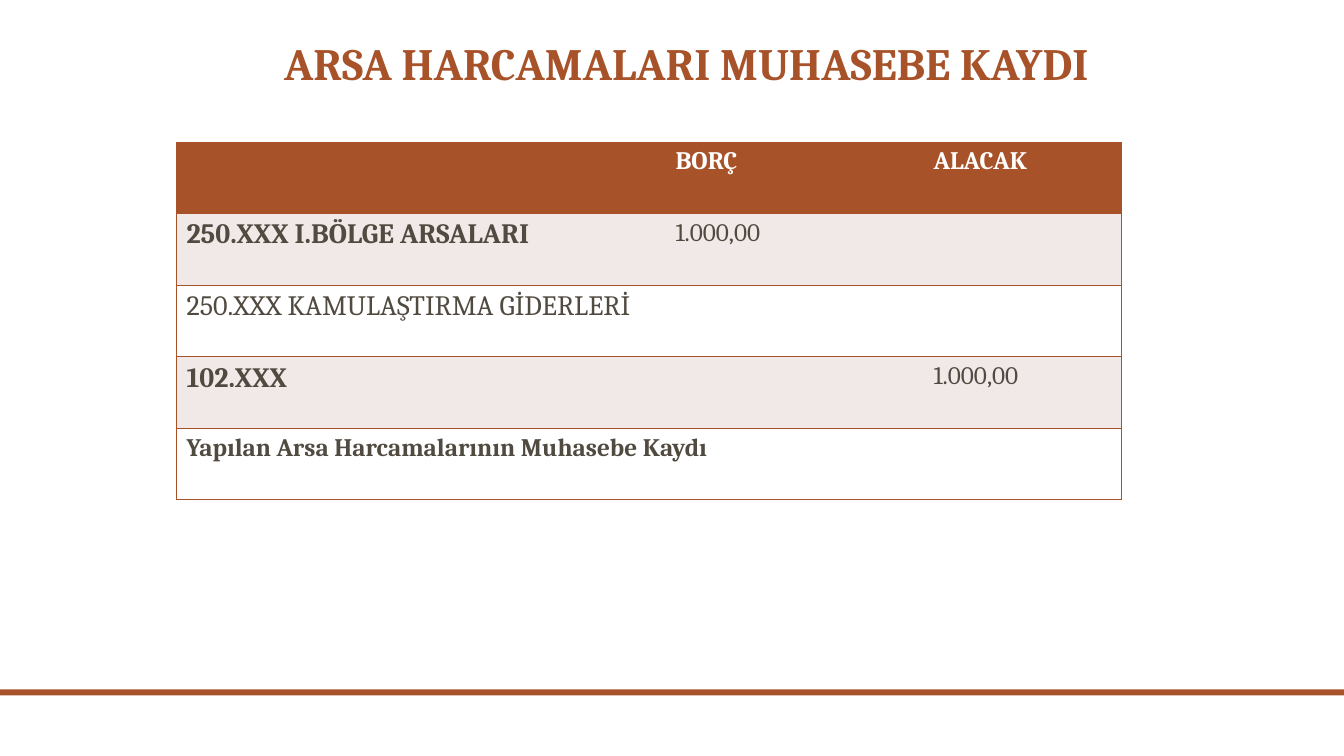
from lxml import etree
from pptx import Presentation
from pptx.dml.color import RGBColor
from pptx.enum import shapes, text
from pptx.oxml import ns
from pptx.util import Inches, Pt

FONT = "Cambria"
RUST, WHITE, ROSE, BROWN = "A85229", "FFFFFF", "F1E9E8", "514A40"
COLUMN_WIDTHS = (4.85, 2.56, 1.96)
ROW_HEIGHT = 0.71
ENTRIES = (
    (("", "BORÇ", "ALACAK"), 18, True),
    (("250.XXX I.BÖLGE ARSALARI", "1.000,00", ""), 20, True),
    (("250.XXX KAMULAŞTIRMA GİDERLERİ", "", ""), 20, False),
    (("102.XXX", "", "1.000,00"), 20, True),
    (("Yapılan Arsa Harcamalarının Muhasebe Kaydı", "", ""), 18, True),
)


def color(value):
    """Turn a hex string into a colour."""
    return RGBColor.from_string(value)


def style_text(paragraph, size, shade, bold):
    """Format every run of a paragraph."""
    for run in paragraph.runs:
        run.font.name = FONT
        run.font.size = Pt(size)
        run.font.bold = bold
        run.font.color.rgb = color(shade)


def add_footer_rule(slide):
    """Draw the bar across the foot of the slide."""
    rule = slide.shapes.add_shape(shapes.MSO_SHAPE.RECTANGLE, 0, Inches(6.84),
                                  Inches(13.33), Inches(0.06))
    rule.shadow.inherit = False
    rule.fill.solid()
    rule.fill.fore_color.rgb = color(RUST)
    rule.line.fill.background()


def add_title(slide, wording):
    """Place the centred heading."""
    box = slide.shapes.add_textbox(Inches(1.56), Inches(0.22), Inches(10.5), Inches(0.72))
    frame = box.text_frame
    frame.word_wrap = True
    frame.vertical_anchor = text.MSO_ANCHOR.BOTTOM
    frame.text = wording
    heading = frame.paragraphs[0]
    heading.alignment = text.PP_ALIGN.CENTER
    heading.line_spacing = 0.9
    style_text(heading, 32, RUST, True)


def set_borders(cell, visible):
    """Draw the visible sides of a cell and clear the others."""
    properties = cell._tc.get_or_add_tcPr()
    for position, side in enumerate("LRTB"):
        border = etree.Element(ns.qn(f"a:ln{side}"), w=str(Pt(1)))
        if side in visible:
            fill = etree.SubElement(border, ns.qn("a:solidFill"))
            etree.SubElement(fill, ns.qn("a:srgbClr"), val=RUST)
        else:
            etree.SubElement(border, ns.qn("a:noFill"))
        properties.insert(position, border)


def fill_cell(cell, wording, size, shade, bold, background):
    """Write a cell and paint its background."""
    cell.text = wording
    style_text(cell.text_frame.paragraphs[0], size, shade, bold)
    cell.fill.solid()
    cell.fill.fore_color.rgb = color(background)


def add_ledger(slide):
    """Build the table of debit and credit entries."""
    last_row, last_column = len(ENTRIES) - 1, len(COLUMN_WIDTHS) - 1
    frame = slide.shapes.add_table(
        len(ENTRIES), len(COLUMN_WIDTHS), Inches(1.75), Inches(1.41),
        Inches(sum(COLUMN_WIDTHS)), Inches(ROW_HEIGHT * len(ENTRIES)))
    ledger = frame.table
    for column, width in zip(ledger.columns, COLUMN_WIDTHS):
        column.width = Inches(width)
    for r, (wordings, account_size, account_bold) in enumerate(ENTRIES):
        ledger.rows[r].height = Inches(ROW_HEIGHT)
        header = r == 0
        background = RUST if header else ROSE if r % 2 else WHITE
        for c, wording in enumerate(wordings):
            cell = ledger.cell(r, c)
            fill_cell(cell, wording, 18 if c else account_size,
                      WHITE if header else BROWN,
                      header if c else account_bold, background)
            sides = "TB" + "L" * (c == 0) + "R" * (c == last_column or r == last_row)
            set_borders(cell, sides)
    ledger.cell(last_row, 0).merge(ledger.cell(last_row, last_column))


def main():
    """Build and save the slide."""
    deck = Presentation()
    deck.slide_width, deck.slide_height = Inches(13.33), Inches(7.5)
    slide = deck.slides.add_slide(deck.slide_layouts[6])
    add_footer_rule(slide)
    add_title(slide, "ARSA HARCAMALARI MUHASEBE KAYDI")
    add_ledger(slide)
    deck.save("out.pptx")


if __name__ == "__main__":
    main()
